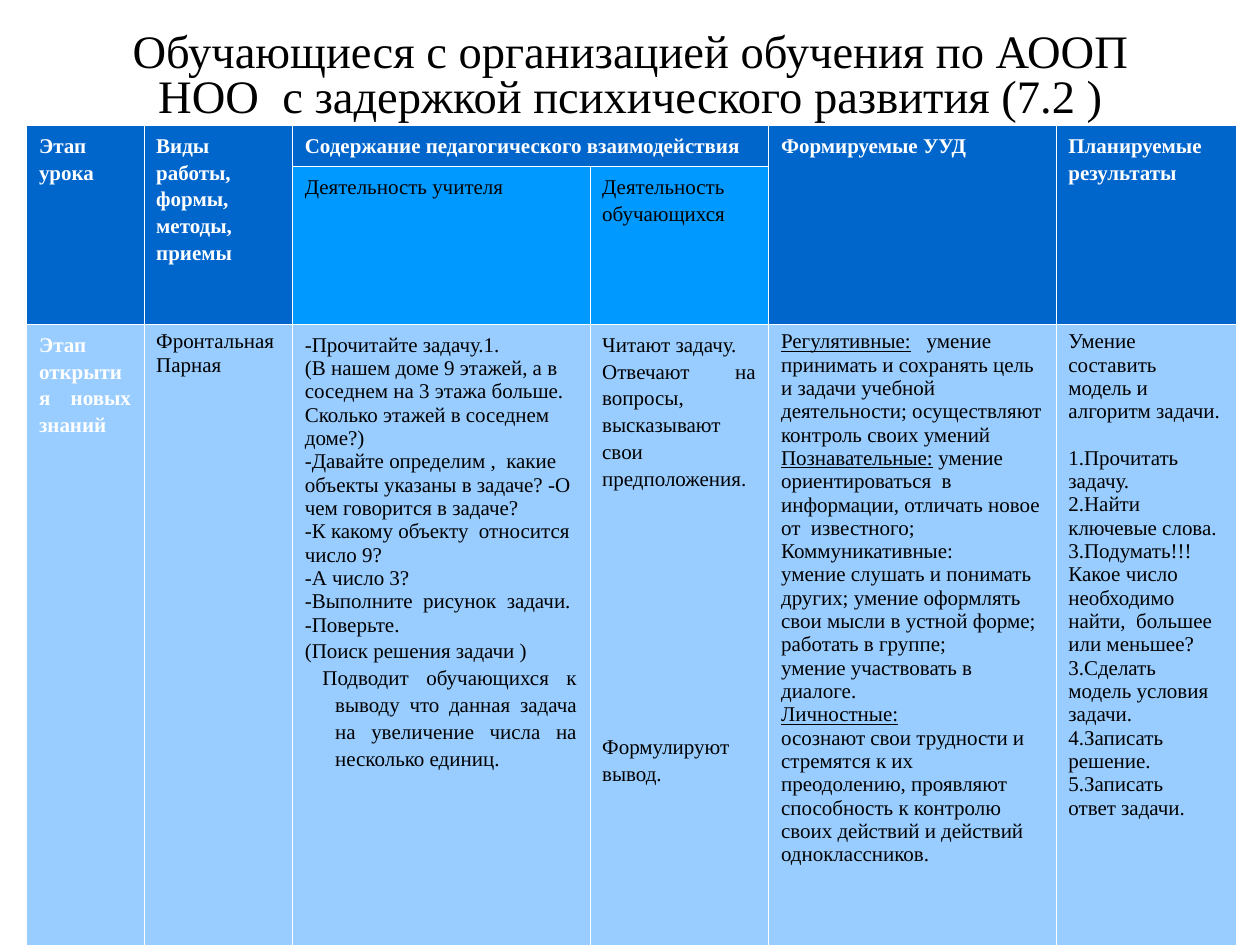
import pptx
import pptx.util
import pptx.dml.color
import pptx.enum.text
import pptx.oxml
from dataclasses import dataclass

Inches = pptx.util.Inches
Pt = pptx.util.Pt
Align = pptx.enum.text.PP_ALIGN


@dataclass(frozen=True)
class Theme:
    font: str = "Times New Roman"
    title_size: float = 26.6
    body_size: float = 12
    ink: str = "000000"
    light: str = "FFFFFF"
    header: str = "0066CC"
    subheader: str = "0099FF"
    body: str = "99CCFF"


theme = Theme()


def add_run(paragraph, text, size, color, bold=False, underline=False):
    run = paragraph.add_run()
    run.text = text
    run.font.name = theme.font
    run.font.size = Pt(size)
    run.font.bold = bold
    run.font.underline = underline
    run.font.color.rgb = pptx.dml.color.RGBColor.from_string(color)


def fill_cell(cell, entries, color=theme.ink, bold=False):
    cell.margin_left = cell.margin_right = Inches(0.1)
    cell.margin_top = cell.margin_bottom = Inches(0.05)
    for number, (layout, runs) in enumerate(entries):
        frame = cell.text_frame
        paragraph = frame.add_paragraph() if number else frame.paragraphs[0]
        paragraph.alignment = Align.JUSTIFY if layout.get("loose") else Align.LEFT
        paragraph.line_spacing = 1.15 if layout.get("loose") else 1.0
        paragraph.space_before = Pt(layout.get("gap", 0))
        if layout.get("hanging"):
            properties = paragraph._p.get_or_add_pPr()
            properties.set("marL", str(Inches(0.24)))
            properties.set("indent", str(Inches(-0.24)))
        for text, underline in runs:
            add_run(paragraph, text, theme.body_size, color, bold, underline)


presentation = pptx.Presentation()
presentation.slide_width = Inches(10)
presentation.slide_height = Inches(7.5)
slide = presentation.slides.add_slide(presentation.slide_layouts[5])

title = slide.shapes.title
title.left, title.top, title.width, title.height = map(Inches, (0.51, 0.14, 9, 1.25))
heading = title.text_frame
heading.word_wrap = True
heading.auto_size = pptx.enum.text.MSO_AUTO_SIZE.NONE
heading.vertical_anchor = pptx.enum.text.MSO_ANCHOR.TOP
heading.margin_top = Inches(0.12)
heading.paragraphs[0].alignment = Align.CENTER
heading.paragraphs[0].line_spacing = 0.8
add_run(
    heading.paragraphs[0],
    "Обучающиеся с организацией обучения по АООП НОО  с задержкой психического развития (7.2 )",
    theme.title_size,
    theme.ink,
)

column_widths = (0.93, 1.18, 2.36, 1.42, 2.28, 1.43)
row_heights = (0.33, 1.25, 5.05)
row_fills = (theme.header, theme.subheader, theme.body)
lesson = slide.shapes.add_table(
    len(row_heights), len(column_widths),
    Inches(0.21), Inches(0.99), Inches(sum(column_widths)), Inches(sum(row_heights)),
).table
lesson.horz_banding = False
for column, width in zip(lesson.columns, column_widths):
    column.width = Inches(width)

for row, height, color in zip(lesson.rows, row_heights, row_fills):
    row.height = Inches(height)
    for cell in row.cells:
        cell_properties = cell._tc.get_or_add_tcPr()
        for side in ("lnL", "lnR", "lnT", "lnB"):
            cell_properties.append(pptx.oxml.parse_xml(
                f'<a:{side} xmlns:a="http://schemas.openxmlformats.org/drawingml/2006/main" '
                f'w="{Pt(0.06)}"><a:solidFill><a:srgbClr val="{theme.light}"/>'
                f'</a:solidFill></a:{side}>'
            ))
        cell.fill.solid()
        cell.fill.fore_color.rgb = pptx.dml.color.RGBColor.from_string(color)

for column_index in (0, 1, 4, 5):
    lesson.cell(0, column_index).merge(lesson.cell(1, column_index))
lesson.cell(0, 2).merge(lesson.cell(0, 3))

loose = {"loose": True}
tight = {}
hanging = {"loose": True, "hanging": True}

headers = {
    0: "Этап урока",
    1: "Виды работы, формы, методы, приемы",
    2: "Содержание педагогического взаимодействия",
    4: "Формируемые УУД",
    5: "Планируемые результаты",
}
for column_index, text in headers.items():
    fill_cell(lesson.cell(0, column_index), [(loose, [(text, False)])], theme.light, True)
for column_index, text in {2: "Деятельность учителя", 3: "Деятельность обучающихся"}.items():
    fill_cell(lesson.cell(1, column_index), [(loose, [(text, False)])])

stage = [(loose, [("Этап открытия новых знаний", False)])]
fill_cell(lesson.cell(2, 0), stage, theme.light, True)

work_forms = [(tight, [(text, False)]) for text in ("Фронтальная", "Парная")]

teacher = [
    (layout, [(text, False)]) for layout, text in (
        (loose, "-Прочитайте задачу.1."),
        (tight, "(В нашем доме 9 этажей, а в соседнем на 3 этажа больше. Сколько этажей в соседнем доме?)"),
        (tight, "-Давайте определим ,  какие объекты указаны в задаче? -О чем говорится в задаче?"),
        (tight, "-К какому объекту  относится число 9?"),
        (tight, "-А число 3?"),
        (tight, "-Выполните  рисунок  задачи."),
        (tight, "-Поверьте."),
        (hanging, "(Поиск решения задачи )"),
        (hanging, " Подводит обучающихся к выводу что данная задача на увеличение числа на несколько единиц."),
    )
]

pupils = [
    (loose, [("Читают задачу.", False)]),
    (loose, [("Отвечают на вопросы, высказывают свои предположения.", False)]),
    ({"loose": True, "gap": 138}, [("Формулируют вывод.", False)]),
]

skills = [
    (tight, [
        ("Регулятивные:", True),
        ("   умение принимать и сохранять цель и задачи учебной деятельности; осуществляют контроль своих умений", False),
    ]),
    (tight, [
        ("Познавательные:", True),
        (" умение  ориентироваться  в информации, отличать новое от  известного;", False),
    ]),
    (tight, [("Коммуникативные:", False)]),
    (tight, [("умение слушать и понимать других; умение оформлять свои мысли в устной форме; работать в группе;", False)]),
    (tight, [("умение участвовать в диалоге.", False)]),
    (tight, [("Личностные:", True)]),
    (tight, [("осознают свои трудности и стремятся к их преодолению, проявляют способность к контролю своих действий и действий одноклассников.", False)]),
]

results = [
    (layout, [(text, False)]) for layout, text in (
        (tight, "Умение составить модель и алгоритм задачи."),
        ({"gap": 13.3}, "1.Прочитать задачу."),
        (tight, "2.Найти ключевые слова."),
        (tight, "3.Подумать!!! Какое число необходимо найти,  большее или меньшее?"),
        (tight, "3.Сделать модель условия задачи."),
        (tight, "4.Записать решение."),
        (tight, "5.Записать   ответ задачи."),
    )
]

for column_index, entries in enumerate((work_forms, teacher, pupils, skills, results), 1):
    fill_cell(lesson.cell(2, column_index), entries)

presentation.save("out.pptx")
